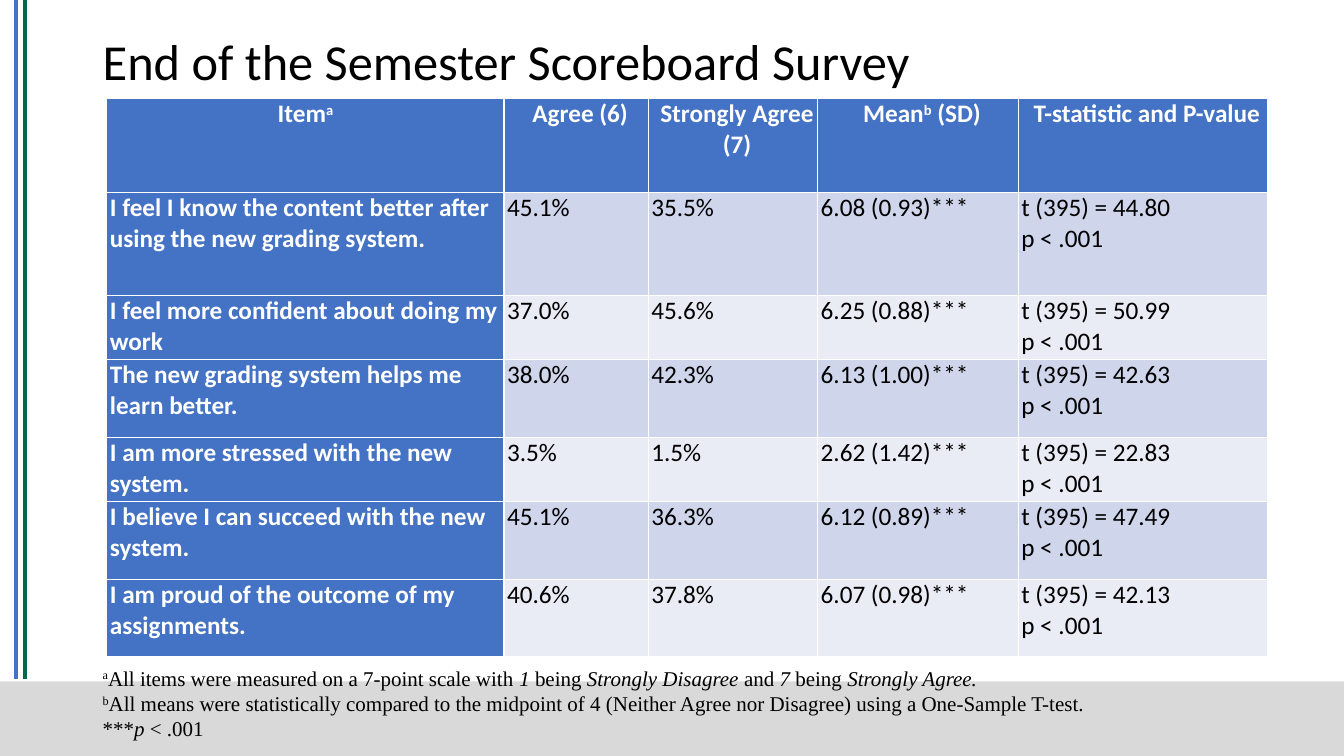
from pptx import Presentation
from pptx.dml.color import RGBColor
from pptx.enum.shapes import MSO_CONNECTOR, MSO_SHAPE
from pptx.enum.text import MSO_ANCHOR, PP_ALIGN
from pptx.oxml.ns import qn
from pptx.util import Inches, Pt
from lxml import etree

RECT = MSO_SHAPE.RECTANGLE
LINE = MSO_CONNECTOR.STRAIGHT
MIDDLE = MSO_ANCHOR.MIDDLE
CENTER = PP_ALIGN.CENTER

WIDE, HIGH = 13.33, 7.5
LEFT = 0.92
COLORS = {
    "blue": "4472C4", "green": "01694E", "gray": "D9D9D9",
    "odd": "CFD5EA", "even": "E9EBF5", "white": "FFFFFF", "black": "000000",
}


def color(name):
    return RGBColor.from_string(COLORS[name])


def write(frame, text, size, font, ink, bold=False):
    """Fill a frame; parts split at | are raised after ^ and italic after _."""
    frame.text = "\n".join("" if "|" in row else row for row in text.split("\n"))
    for para, row in zip(frame.paragraphs, text.split("\n")):
        if "|" in row:
            for part in row.split("|"):
                if not part:
                    continue
                run = para.add_run()
                run.text = part.lstrip("^_")
                if part[0] == "^":
                    run.font._element.set("baseline", "30000")
                elif part[0] == "_":
                    run.font.italic = True
        for run in para.runs:
            run.font.size = Pt(size)
            run.font.name = font
            run.font.bold = bold
            run.font.color.rgb = color(ink)


deck = Presentation()
deck.slide_width, deck.slide_height = Inches(WIDE), Inches(HIGH)
slide = deck.slides.add_slide(deck.slide_layouts[6])
shapes = slide.shapes

# Footer band
top = 6.76
band = shapes.add_shape(RECT, 0, Inches(top), Inches(WIDE), Inches(HIGH - top))
band.shadow.inherit = False
band.fill.solid()
band.fill.fore_color.rgb = color("gray")
band.line.fill.background()

# Stripes at the left edge
for x, name in ((0.16, "blue"), (0.25, "green")):
    stripe = shapes.add_connector(LINE, Inches(x), Inches(-0.01), Inches(x), Inches(6.74))
    stripe.line.color.rgb = color(name)
    stripe.line.width = Pt(3)
    etree.SubElement(stripe._element.spPr, qn("a:effectLst"))

# Title
title = shapes.add_textbox(Inches(LEFT), Inches(0.4), Inches(11.5), Inches(0.47))
title.text_frame.word_wrap = True
title.text_frame.vertical_anchor = MIDDLE
write(title.text_frame, "End of the Semester Scoreboard Survey", 36, "Calibri", "black")
title.text_frame.paragraphs[0].line_spacing = 0.9

# Survey table
heads = ["Item|^a", "Agree (6)", "Strongly Agree\n(7)", "Mean|^b| (SD)",
         "T-statistic and P-value"]
items = [
    ("I feel I know the content better after using the new grading system.",
     "45.1%", "35.5%", "6.08 (0.93)", "44.80"),
    ("I feel more confident about doing my work",
     "37.0%", "45.6%", "6.25 (0.88)", "50.99"),
    ("The new grading system helps me learn better.",
     "38.0%", "42.3%", "6.13 (1.00)", "42.63"),
    ("I am more stressed with the new system.",
     "3.5%", "1.5%", "2.62 (1.42)", "22.83"),
    ("I believe I can succeed with the new system.",
     "45.1%", "36.3%", "6.12 (0.89)", "47.49"),
    ("I am proud of the outcome of my assignments.",
     "40.6%", "37.8%", "6.07 (0.98)", "42.13"),
]
rows = [heads] + [
    (item, agree, strong, mean + "***", f"t (395) = {stat}\np < .001")
    for item, agree, strong, mean, stat in items
]
cols = [3.94, 1.43, 1.68, 1.99, 2.47]
tall = [0.93, 1.02, 0.64, 0.77, 0.64, 0.77, 0.77]
table = shapes.add_table(len(rows), len(cols), Inches(1.06), Inches(0.98),
                         Inches(sum(cols)), Inches(sum(tall))).table
table.first_col = True
for col, size in zip(table.columns, cols):
    col.width = Inches(size)
for r, row in enumerate(rows):
    table.rows[r].height = Inches(tall[r])
    for c, text in enumerate(row):
        cell = table.cell(r, c)
        cell.margin_left = cell.margin_right = Inches(0.03)
        cell.margin_top = cell.margin_bottom = 0
        head = r == 0 or c == 0
        cell.fill.solid()
        cell.fill.fore_color.rgb = color("blue" if head else "odd" if r % 2 else "even")
        write(cell.text_frame, text, 18, "Calibri", "white" if head else "black", head)
        if r == 0:
            for para in cell.text_frame.paragraphs:
                para.alignment = CENTER
                if c:
                    para._p.get_or_add_pPr().set("marL", str(Inches(0.08)))

# Footnotes
notes = shapes.add_textbox(Inches(LEFT), Inches(6.55), Inches(12.1), Inches(1.16))
notes.text_frame.word_wrap = True
write(notes.text_frame,
      "^a|All items were measured on a 7-point scale with |_1| being "
      "|_Strongly Disagree| and |_7| being |_Strongly Agree.\n"
      "^b|All means were statistically compared to the midpoint of 4 "
      "(Neither Agree nor Disagree) using a One-Sample T-test.\n"
      "***|_p| < .001",
      15, "Times New Roman", "black")

deck.save("out.pptx")
